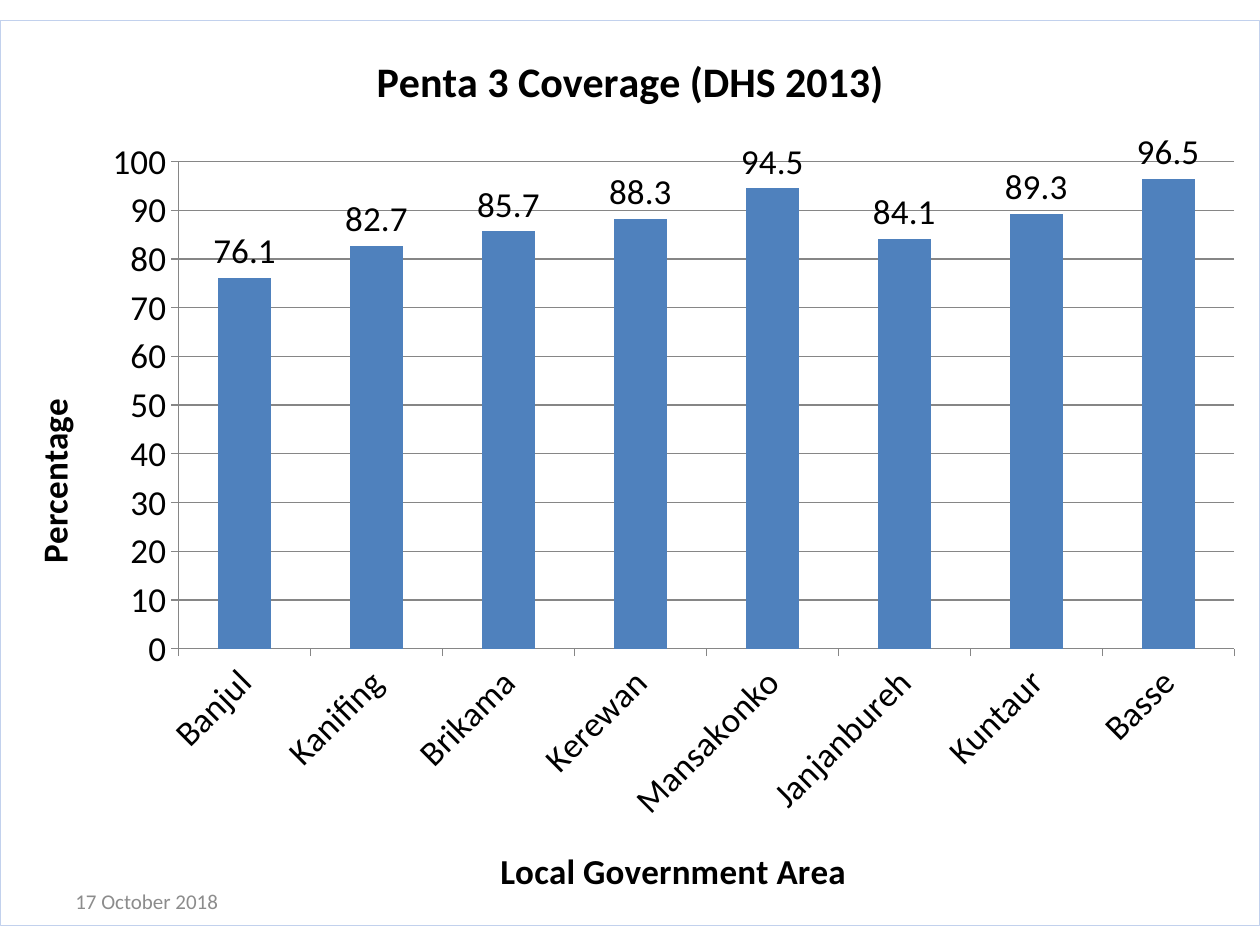
from dataclasses import dataclass

from lxml.etree import fromstring
from pptx import Presentation
from pptx.chart.data import CategoryChartData
from pptx.dml.color import RGBColor
from pptx.enum.chart import XL_CHART_TYPE, XL_LABEL_POSITION, XL_TICK_MARK
from pptx.enum.text import MSO_ANCHOR
from pptx.oxml.ns import nsdecls, qn
from pptx.util import Inches, Pt

# Content
TITLE = "Penta 3 Coverage (DHS 2013)"
X_NAME, Y_NAME = "Local Government Area", "Percentage"
DATE = "17 October 2018"
DATA = {
    "Banjul": 76.1, "Kanifing": 82.7, "Brikama": 85.7, "Kerewan": 88.3,
    "Mansakonko": 94.5, "Janjanbureh": 84.1, "Kuntaur": 89.3, "Basse": 96.5,
}


@dataclass(frozen=True)
class Theme:
    font: str = "Calibri"
    ink: str = "000000"
    gray: str = "8C8C8C"
    rule: str = "868686"
    bar: str = "4F81BD"
    edge: str = "C2D1ED"
    head: int = 24
    body: int = 20
    small: int = 12


T = Theme()
WIDE, HIGH = Inches(10), Inches(7.5)


def style(font, size=T.body, color=T.ink, bold=False):
    font.name, font.size, font.bold = T.font, Pt(size), bold
    font.color.rgb = RGBColor.from_string(color)


def write(frame, text, **form):
    frame.text = text
    style(frame.paragraphs[0].runs[0].font, **form)


def place(x, y, w, h):
    """Turn shares of the slide into lengths."""
    return int(x * WIDE), int(y * HIGH), int(w * WIDE), int(h * HIGH)


def rule(line):
    line.color.rgb = RGBColor.from_string(T.rule)
    line.width = Pt(0.75)


def frame_chart(chart):
    """Give the chart area a thin border."""
    edge = fromstring(
        f'<c:spPr {nsdecls("c", "a")}><a:noFill/><a:ln w="{Pt(0.75)}"><a:solidFill>'
        f'<a:srgbClr val="{T.edge}"/></a:solidFill></a:ln></c:spPr>')
    chart.element.find(qn("c:chart")).addnext(edge)


def add_bars(slide):
    data = CategoryChartData()
    data.categories = list(DATA)
    data.add_series("Series 1", list(DATA.values()))
    chart = slide.shapes.add_chart(
        XL_CHART_TYPE.COLUMN_CLUSTERED, *place(0, 0.0213, 1, 0.9587), data).chart
    style(chart.font)
    chart.has_legend = False
    chart.has_title = True
    write(chart.chart_title.text_frame, TITLE, size=T.head, bold=True)
    frame_chart(chart)

    # Bars and their values
    plot = chart.plots[0]
    plot.gap_width, plot.vary_by_categories = 150, False
    fill = plot.series[0].format.fill
    fill.solid()
    fill.fore_color.rgb = RGBColor.from_string(T.bar)
    plot.has_data_labels = True
    tags = plot.data_labels
    tags.show_value, tags.position = True, XL_LABEL_POSITION.OUTSIDE_END
    style(tags.font)

    # Axes
    cat, val = chart.category_axis, chart.value_axis
    for axis, name in ((cat, X_NAME), (val, Y_NAME)):
        write(axis.axis_title.text_frame, name, bold=True)
        axis.major_tick_mark = XL_TICK_MARK.OUTSIDE
        style(axis.tick_labels.font)
        rule(axis.format.line)
    val.minimum_scale, val.maximum_scale, val.major_unit = 0, 100, 10
    val.has_major_gridlines = True
    rule(val.major_gridlines.format.line)
    turn = cat._element.find(qn("c:txPr")).find(qn("a:bodyPr"))
    turn.set("rot", str(-45 * 60000))
    turn.set("vert", "horz")


def add_date(slide):
    frame = slide.shapes.add_textbox(*place(0.05, 0.9267, 0.233, 0.0533)).text_frame
    frame.word_wrap = True
    frame.vertical_anchor = MSO_ANCHOR.MIDDLE
    write(frame, DATE, size=T.small, color=T.gray)


def main():
    deck = Presentation()
    deck.slide_width, deck.slide_height = WIDE, HIGH
    slide = deck.slides.add_slide(deck.slide_layouts[6])
    add_bars(slide)
    add_date(slide)
    deck.save("out.pptx")


if __name__ == "__main__":
    main()
